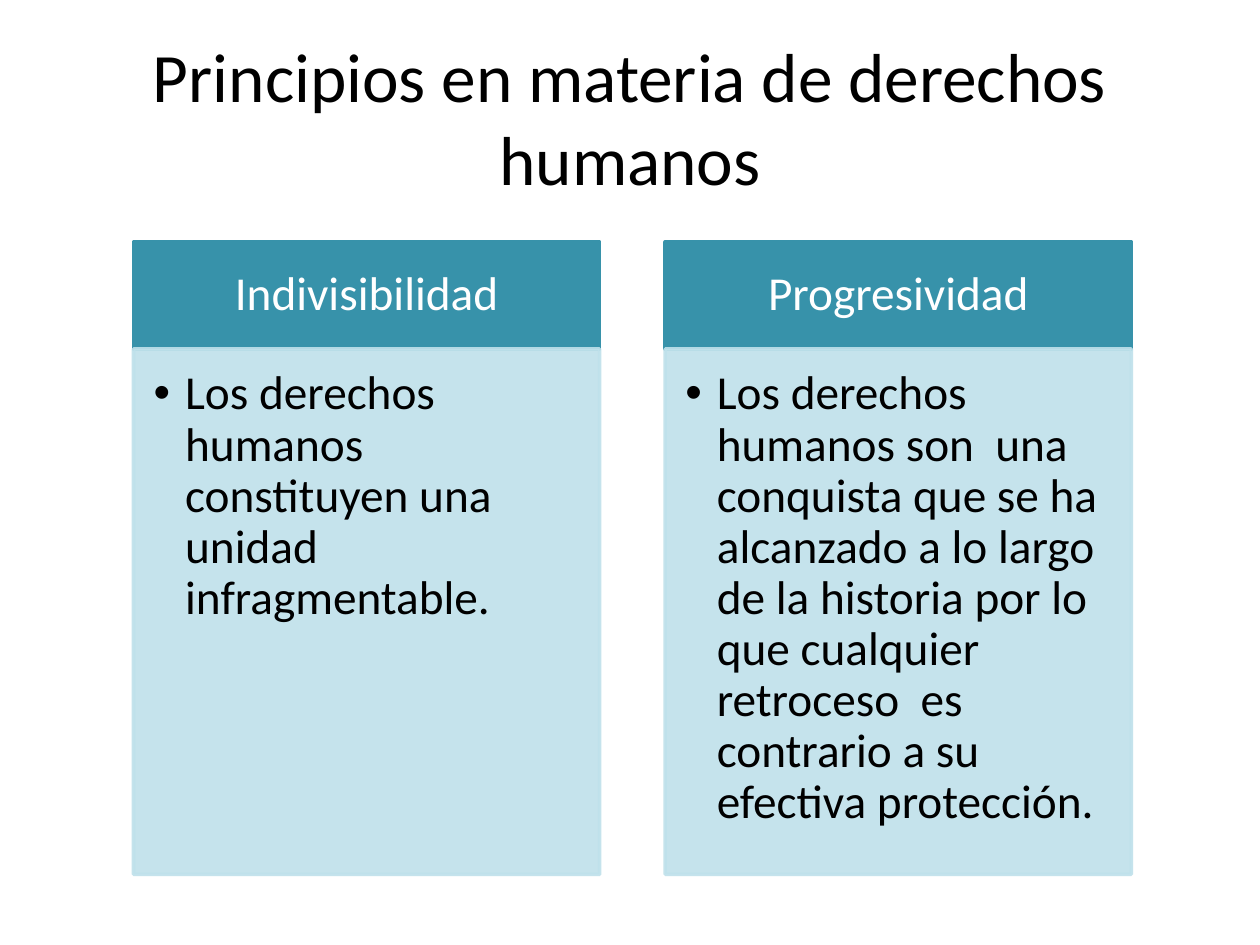
from dataclasses import dataclass

from lxml.etree import SubElement
from pptx import Presentation
from pptx.dml.color import RGBColor
from pptx.enum.shapes import MSO_SHAPE as Shape
from pptx.enum.text import MSO_ANCHOR as Anchor, MSO_AUTO_SIZE as AutoSize, PP_ALIGN as Align
from pptx.oxml.ns import qn
from pptx.util import Inches, Pt

FONT = "Calibri"
BLACK, WHITE, TEAL, PALE = "000000", "FFFFFF", "3792AA", "BFE1EB"
LEFT, TOP, WIDTH, PITCH = 1.06, 1.92, 3.7, 4.22
HEADER_HEIGHT, BODY_HEIGHT = 0.85, 4.17


@dataclass
class Principle:
    """A principle's name and its explanation."""

    name: str
    meaning: str


PRINCIPLES = [
    Principle("Indivisibilidad", "Los derechos humanos constituyen una unidad infragmentable."),
    Principle(
        "Progresividad",
        "Los derechos humanos son  una conquista que se ha alcanzado a lo largo de la historia "
        "por lo que cualquier retroceso  es contrario a su efectiva protección.",
    ),
]


def paint(fill, color: str, alpha: int = 100) -> None:
    """Give a fill a solid colour with an opacity in percent."""
    fill.solid()
    fill.fore_color.rgb = RGBColor.from_string(color)
    if alpha < 100:
        for element in fill._xPr.iterchildren(qn("a:solidFill")):
            SubElement(element[0], qn("a:alpha"), val=str(alpha * 1000))


def write(frame, text: str, size: float, color: str, anchor, align, insets):
    """Fill a text frame with one formatted paragraph and return it."""
    frame.text = text
    frame.word_wrap = True
    frame.auto_size = AutoSize.NONE
    frame.vertical_anchor = anchor
    frame.margin_left, frame.margin_top, frame.margin_right, frame.margin_bottom = map(Inches, insets)
    para = frame.paragraphs[0]
    para.alignment = align
    font = para.runs[0].font
    font.name, font.size = FONT, Pt(size)
    font.color.rgb = RGBColor.from_string(color)
    return para


def add_panel(slide, left: float, top: float, height: float, color: str, alpha: int = 100):
    """Add a flat rectangle one column wide."""
    box = slide.shapes.add_shape(Shape.RECTANGLE, *map(Inches, (left, top, WIDTH, height)))
    box.shadow.inherit = False
    paint(box.fill, color, alpha)
    paint(box.line.fill, color, alpha)
    box.line.width = Pt(2)
    return box


def add_bullet(para) -> None:
    """Give a paragraph a hanging round bullet."""
    para.level = 1
    properties = para._p.get_or_add_pPr()
    properties.set("marL", str(Inches(0.25)))
    properties.set("indent", str(Inches(-0.25)))
    SubElement(properties, qn("a:buFont"), typeface="Arial")
    SubElement(properties, qn("a:buChar"), char="•")


def add_column(slide, column: int, principle: Principle) -> None:
    """Draw a principle's header above its bulleted explanation."""
    left = LEFT + column * PITCH
    header = add_panel(slide, left, TOP, HEADER_HEIGHT, TEAL)
    para = write(header.text_frame, principle.name, 27, WHITE, Anchor.MIDDLE, Align.CENTER,
                 (0.21, 0.12, 0.21, 0.12))
    para.line_spacing = 0.9
    body = add_panel(slide, left, TOP + HEADER_HEIGHT, BODY_HEIGHT, PALE, 90)
    para = write(body.text_frame, principle.meaning, 27, BLACK, Anchor.TOP, Align.LEFT,
                 (0.16, 0.16, 0.21, 0.24))
    para.line_spacing = 0.9
    add_bullet(para)


def main() -> None:
    """Build and save the slide."""
    deck = Presentation()
    deck.slide_width, deck.slide_height = Inches(10), Inches(7.5)
    slide = deck.slides.add_slide(deck.slide_layouts.get_by_name("Title Only"))
    title = slide.shapes.title
    title.left, title.top, title.width, title.height = map(Inches, (0.5, 0.3, 9, 1.25))
    write(title.text_frame, "Principios en materia de derechos humanos", 39.6, BLACK,
          Anchor.MIDDLE, Align.CENTER, (0.1, 0.05, 0.1, 0.05))
    for column, principle in enumerate(PRINCIPLES):
        add_column(slide, column, principle)
    deck.save("out.pptx")


if __name__ == "__main__":
    main()
